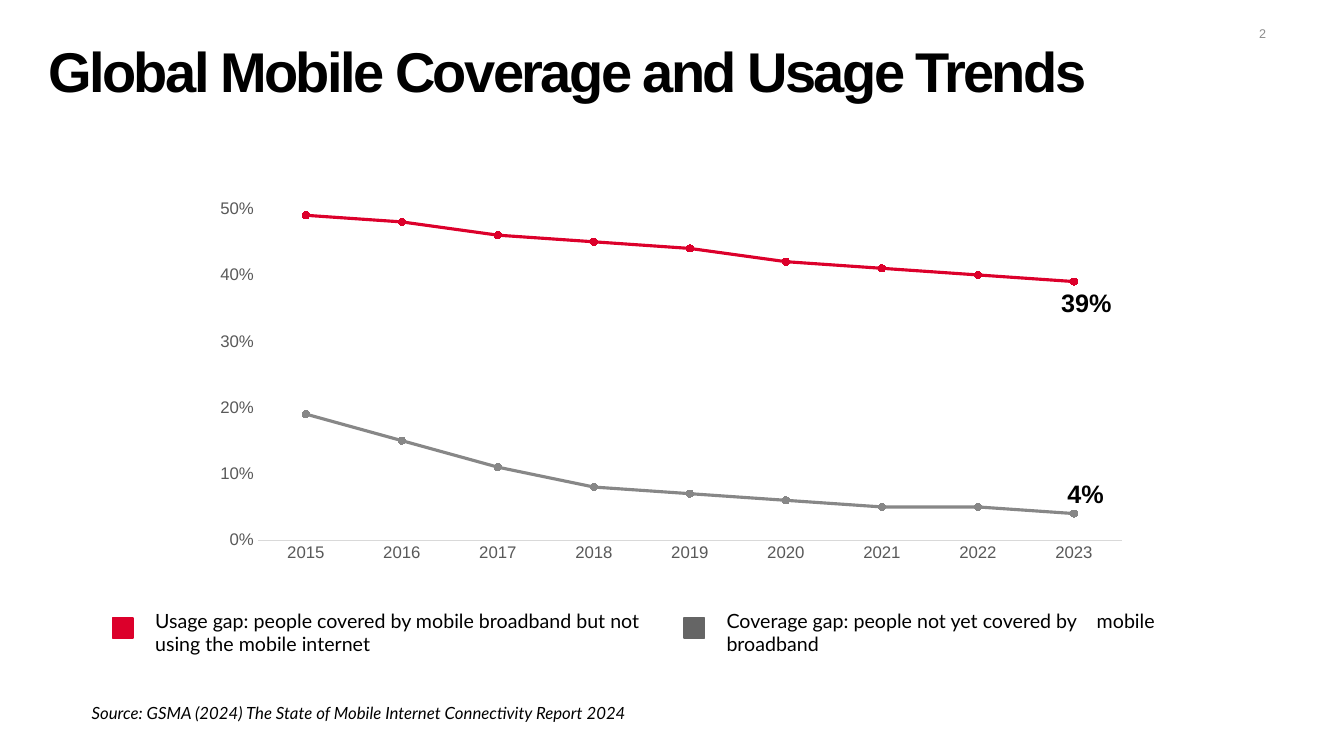
from dataclasses import dataclass
from lxml import etree
from pptx import Presentation
from pptx import util as u
from pptx.chart import data as cdata
from pptx.dml import color
from pptx.enum import chart as ch, shapes, text
from pptx.oxml import ns


@dataclass
class Theme:
    head: str = "Arial"
    body: str = "Lato"
    ink: str = "000000"
    red: str = "DC002B"
    key: str = "656565"
    gray: str = "878787"
    tick: str = "595959"
    rule: str = "D9D9D9"
    page: str = "8C8C8C"
    title: int = 40
    mark: int = 18
    note: int = 14
    small: int = 12
    tiny: int = 9


T = Theme()


def rgb(hue):
    return color.RGBColor.from_string(hue)


def style(item, vals):
    for name, val in vals.items():
        setattr(item, name, val)


def ink(font, face, size, hue=T.ink, **more):
    style(font, dict(name=face, size=u.Pt(size), **more))
    font.color.rgb = rgb(hue)


def label(slide, box, words, face, size, hue=T.ink, gap=0, frame=None, para=None, **more):
    tf = slide.shapes.add_textbox(*map(u.Cm, box)).text_frame
    style(tf, {"word_wrap": True, **(frame or {})})
    p = tf.paragraphs[0]
    style(p, para or {})
    run = p.add_run()
    run.text = words
    ink(run.font, face, size, hue, **more)
    if gap:
        run.font._element.set("spc", str(gap))
    return p


def header(slide, box):
    x, y, w, h = box
    flat = dict.fromkeys(("margin_left", "margin_top", "margin_right", "margin_bottom"), 0)
    label(slide, (x, y, w, h), "Global Mobile Coverage and Usage Trends", T.head, T.title,
          gap=-180, frame=flat, para={"line_spacing": 0.83}, bold=True)
    label(slide, (x + w - 1.25, y - 0.69, 1.25, 0.64), "2", T.head, T.tiny, T.page, gap=-20,
          frame={"vertical_anchor": text.MSO_ANCHOR.MIDDLE, "margin_right": u.Cm(0.73)},
          para={"alignment": text.PP_ALIGN.RIGHT})


def place(chart, **part):
    area = chart._chartSpace.chart.plotArea
    old = area.find(ns.qn("c:layout"))
    if old is not None:
        area.remove(old)
    lay = etree.Element(ns.qn("c:layout"))
    area.insert(0, lay)
    man = etree.SubElement(lay, ns.qn("c:manualLayout"))
    vals = {"layoutTarget": "inner", "xMode": "edge", "yMode": "edge", **part}
    for name, val in vals.items():
        etree.SubElement(man, ns.qn("c:" + name)).set("val", str(val))


def graph(slide, box):
    x, y, w, h = box
    data = cdata.CategoryChartData(number_format="0%")
    data.categories = [str(year) for year in range(2015, 2024)]
    data.add_series("Usage gap", (0.49, 0.48, 0.46, 0.45, 0.44, 0.42, 0.41, 0.4, 0.39))
    data.add_series("Coverage gap", (0.19, 0.15, 0.11, 0.08, 0.07, 0.06, 0.05, 0.05, 0.04))
    chart = slide.shapes.add_chart(
        ch.XL_CHART_TYPE.LINE_MARKERS, *map(u.Cm, box), data).chart
    style(chart, {"has_legend": False, "has_title": False})
    ink(chart.font, T.head, 10)
    chart.plots[0].vary_by_categories = False
    place(chart, x=0.06, y=0.02, w=0.92, h=0.9)

    cat, val = chart.category_axis, chart.value_axis
    for axis in (cat, val):
        style(axis, {"major_tick_mark": ch.XL_TICK_MARK.NONE,
                     "minor_tick_mark": ch.XL_TICK_MARK.NONE,
                     "has_major_gridlines": False})
        ink(axis.tick_labels.font, T.head, T.small, T.tick)
    cat.format.line.color.rgb = rgb(T.rule)
    cat.format.line.width = u.Pt(0.75)
    val.format.line.fill.background()
    style(val, {"minimum_scale": 0, "maximum_scale": 0.55, "major_unit": 0.1})
    style(val.tick_labels, {"number_format": "0%", "number_format_is_linked": False})

    for ser, hue in zip(chart.plots[0].series, (T.red, T.gray)):
        ser.smooth = False
        ser.format.line.color.rgb = rgb(hue)
        ser.format.line.width = u.Pt(2.25)
        style(ser.marker, {"style": ch.XL_MARKER_STYLE.CIRCLE, "size": 5})
        ser.marker.format.fill.solid()
        ser.marker.format.fill.fore_color.rgb = rgb(hue)
        ser.marker.format.line.color.rgb = rgb(hue)

    for words, dx, dy in (("39%", 21.41, 2.9), ("4%", 21.57, 7.7)):
        label(slide, (x + dx, y + dy, 2.06, 0.71), words, T.head, T.mark, bold=True)


def entry(slide, box, hue, words, stop=0):
    x, y, w, h = box
    key = slide.shapes.add_shape(
        shapes.MSO_SHAPE.RECTANGLE, *map(u.Cm, (x, y + 0.36, 0.51, 0.51)))
    key.shadow.inherit = False
    key.fill.solid()
    key.fill.fore_color.rgb = rgb(hue)
    key.line.color.rgb = rgb(hue)
    key.line.width = u.Pt(1)
    p = label(slide, (x + 0.82, y, w - 0.82, h), words, T.body, T.note)
    if stop:
        tabs = etree.SubElement(p._p.get_or_add_pPr(), ns.qn("a:tabLst"))
        tab = etree.SubElement(tabs, ns.qn("a:tab"))
        tab.set("pos", str(u.Cm(stop)))
        tab.set("algn", "l")


def legend(slide, box):
    x, y, w, h = box
    entry(slide, (x, y, 14.1, h), T.red,
          "Usage gap: people covered by mobile broadband but not using the mobile internet")
    entry(slide, (x + 14.4, y, w - 14.4, h), T.key,
          "Coverage gap: people not yet covered by\tmobile broadband", stop=9.33)


def source(slide, box):
    label(slide, box, "Source: GSMA (2024) The State of Mobile Internet Connectivity Report 2024",
          T.body, T.small, italic=True)


def main():
    deck = Presentation()
    style(deck, {"slide_width": u.Cm(33.87), "slide_height": u.Cm(19.05)})
    slide = deck.slides.add_slide(deck.slide_layouts[6])
    header(slide, (1.22, 1.22, 31.42, 1.42))
    graph(slide, (5.08, 4.22, 23.67, 10.21))
    legend(slide, (2.84, 15.21, 26.88, 1.45))
    source(slide, (2.06, 17.58, 14.25, 0.76))
    deck.save("out.pptx")


if __name__ == "__main__":
    main()
